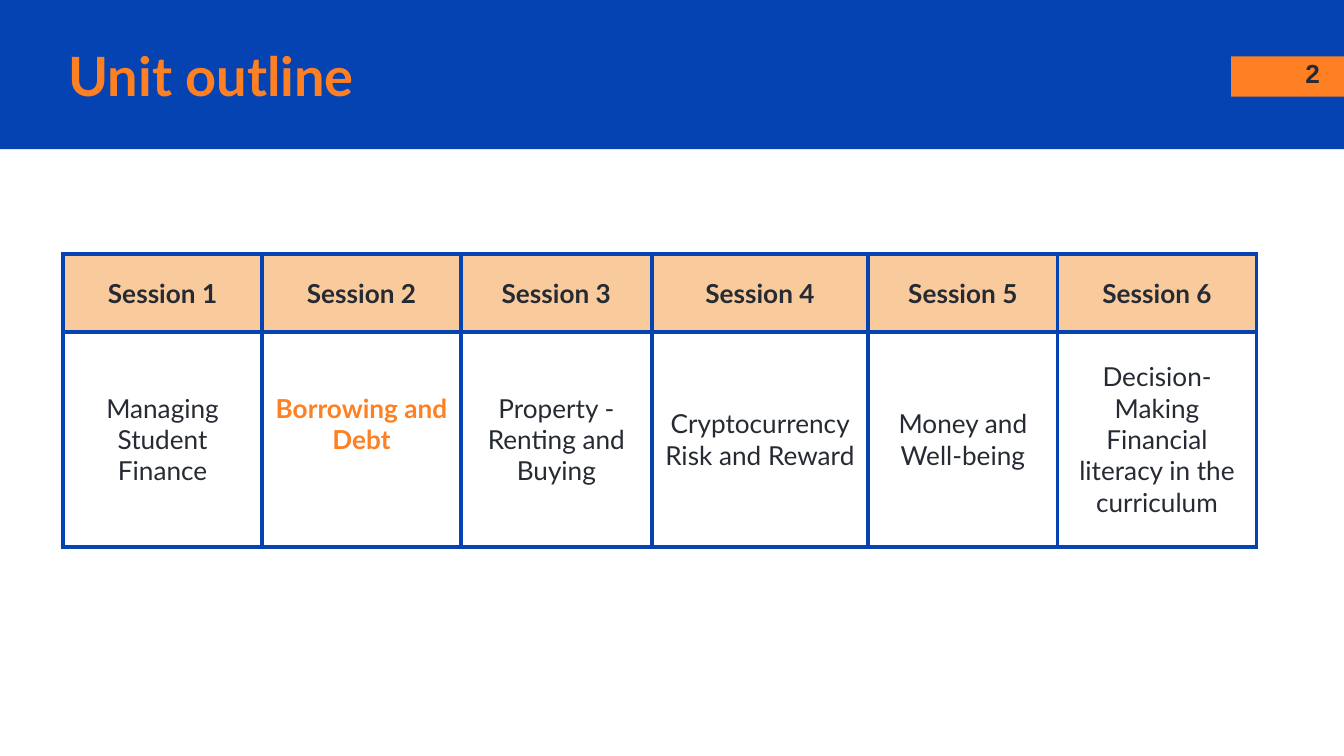
from dataclasses import dataclass

from lxml.etree import SubElement
from pptx import Presentation
from pptx.dml.color import RGBColor
from pptx.enum.shapes import MSO_SHAPE
from pptx.enum.text import MSO_ANCHOR, PP_ALIGN
from pptx.oxml.ns import qn
from pptx.util import Inches, Pt

TITLE = "Unit outline"
PAGE_NUMBER = "2"
SESSIONS = [  # heading, topic paragraphs, column width
    ("Session 1", ["Managing Student Finance"], 1.48),
    ("Session 2", ["Borrowing and Debt"], 1.48),
    ("Session 3", ["Property - Renting and Buying"], 1.42),
    ("Session 4", ["Cryptocurrency Risk and Reward"], 1.61),
    ("Session 5", ["Money and Well-being"], 1.41),
    ("Session 6", ["Decision- Making", "Financial literacy in the curriculum"], 1.48),
]
CURRENT_SESSION = "Session 2"
ROW_HEIGHTS = [0.58, 1.6]


@dataclass(frozen=True)
class Theme:
    blue: str = "0543B3"
    orange: str = "FF8022"
    peach: str = "F9CB9C"
    white: str = "FFFFFF"
    ink: str = "262A33"
    font: str = "Lato"
    number_font: str = "Arial"
    title_size: float = 29
    text_size: float = 14
    border: float = 2.25


THEME = Theme()


def add_text(paragraph, text, color, bold, size=THEME.text_size,
             font=THEME.font, align=PP_ALIGN.CENTER):
    paragraph.alignment = align
    run = paragraph.add_run()
    run.text = text
    run.font.name = font
    run.font.size = Pt(size)
    run.font.bold = bold
    run.font.color.rgb = RGBColor.from_string(color)


def add_block(slide, left, top, width, height, color):
    block = slide.shapes.add_shape(
        MSO_SHAPE.RECTANGLE, Inches(left), Inches(top), Inches(width), Inches(height))
    block.shadow.inherit = False
    block.fill.solid()
    block.fill.fore_color.rgb = RGBColor.from_string(color)
    block.line.fill.background()


def set_insets(frame):
    frame.margin_left = frame.margin_right = Inches(0.1)
    frame.margin_top = frame.margin_bottom = Inches(0.1)
    frame.word_wrap = True


def set_borders(cell):
    properties = cell._tc.get_or_add_tcPr()
    for position, side in enumerate(("a:lnL", "a:lnR", "a:lnT", "a:lnB")):
        line = SubElement(properties, qn(side), w=str(Pt(THEME.border)))
        fill = SubElement(line, qn("a:solidFill"))
        SubElement(fill, qn("a:srgbClr"), val=THEME.blue)
        properties.insert(position, line)


def fill_cell(cell, paragraphs, fill, color, bold):
    cell.fill.solid()
    cell.fill.fore_color.rgb = RGBColor.from_string(fill)
    cell.vertical_anchor = MSO_ANCHOR.MIDDLE
    cell.margin_left = cell.margin_right = Inches(0.09)
    cell.margin_top = cell.margin_bottom = Inches(0.1)
    frame = cell.text_frame
    for index, text in enumerate(paragraphs):
        paragraph = frame.add_paragraph() if index else frame.paragraphs[0]
        add_text(paragraph, text, color, bold)
    set_borders(cell)


def add_header(slide):
    add_block(slide, 0, 0, 10, 1.11, THEME.blue)
    add_block(slide, 9.16, 0.42, 0.84, 0.3, THEME.orange)

    number = slide.shapes.add_textbox(Inches(9.32), Inches(0.33), Inches(0.6), Inches(0.43))
    set_insets(number.text_frame)
    add_text(number.text_frame.paragraphs[0], PAGE_NUMBER, THEME.ink, True,
             font=THEME.number_font, align=PP_ALIGN.RIGHT)

    title = slide.shapes.title
    title.left, title.top = Inches(0.41), Inches(0.28)
    title.width, title.height = Inches(8.46), Inches(0.56)
    set_insets(title.text_frame)
    title.text_frame.vertical_anchor = MSO_ANCHOR.MIDDLE
    add_text(title.text_frame.paragraphs[0], TITLE, THEME.orange, True,
             size=THEME.title_size, align=PP_ALIGN.LEFT)
    number.element.addnext(title.element)  # bring the title in front of the band


def add_session_table(slide):
    total_width = sum(width for _, _, width in SESSIONS)
    table = slide.shapes.add_table(
        len(ROW_HEIGHTS), len(SESSIONS), Inches(0.47), Inches(1.89),
        Inches(total_width), Inches(sum(ROW_HEIGHTS))).table
    for row, height in zip(table.rows, ROW_HEIGHTS):
        row.height = Inches(height)
    for column, (heading, topic, width) in enumerate(SESSIONS):
        table.columns[column].width = Inches(width)
        current = heading == CURRENT_SESSION
        fill_cell(table.cell(0, column), [heading], THEME.peach, THEME.ink, True)
        topic_cell = table.cell(1, column)
        fill_cell(topic_cell, topic, THEME.white,
                  THEME.orange if current else THEME.ink, current)
        if current:
            topic_cell.margin_bottom = Inches(0.33)  # sits half a line higher


def main():
    presentation = Presentation()
    presentation.slide_width = Inches(10)
    presentation.slide_height = presentation.slide_width * 9 // 16
    slide = presentation.slides.add_slide(presentation.slide_layouts[5])
    add_header(slide)
    add_session_table(slide)
    presentation.save("out.pptx")


if __name__ == "__main__":
    main()
